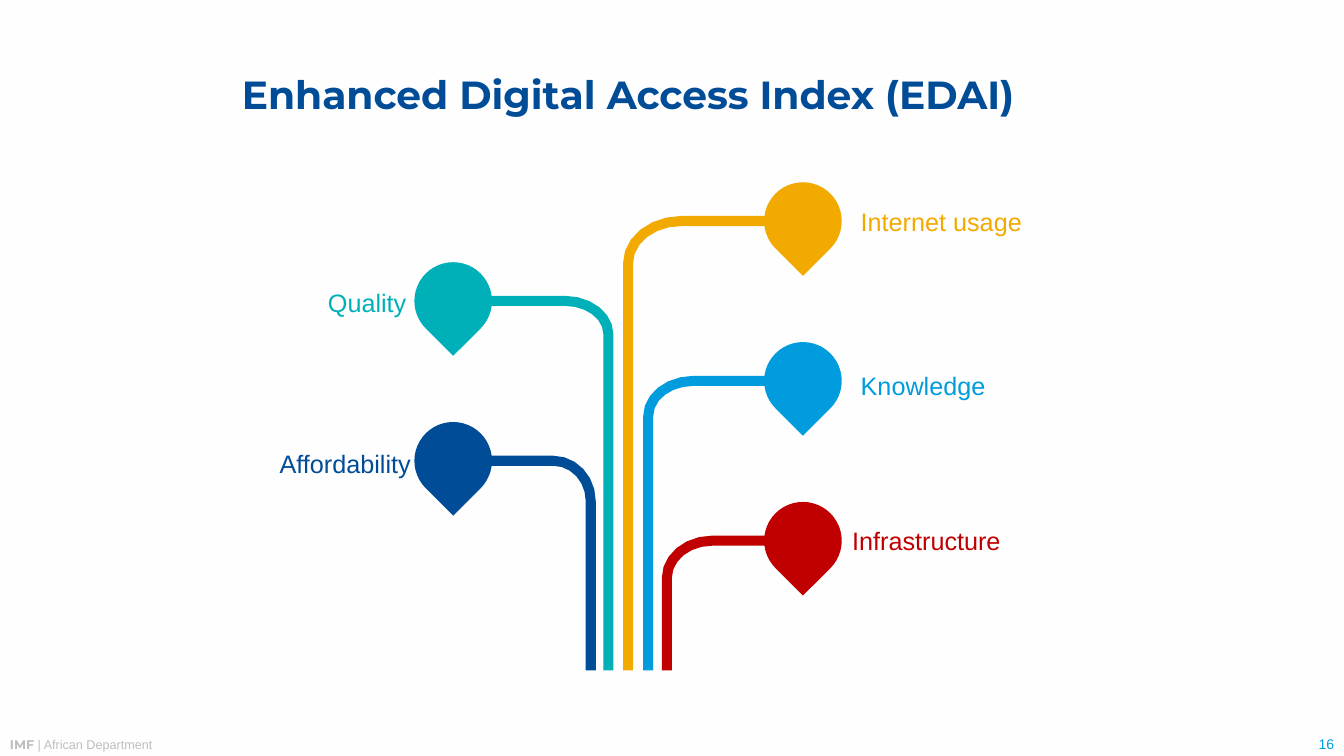
import math
from collections import namedtuple
from dataclasses import dataclass

import pptx
import pptx.dml.color
import pptx.enum.shapes
import pptx.enum.text
import pptx.util

Box = namedtuple("Box", "x y w h")
Branch = namedtuple("Branch", "label color lane side bend label_at label_width")
ALIGN = pptx.enum.text.PP_ALIGN
ANCHOR = pptx.enum.text.MSO_ANCHOR
FIT = pptx.enum.text.MSO_AUTO_SIZE


@dataclass(frozen=True)
class Theme:
    background: str = "FEFEFE"
    navy: str = "004C97"
    teal: str = "00B0B9"
    gold: str = "F2A900"
    blue: str = "009CDE"
    red: str = "C00000"
    grey: str = "BEBEBE"
    body: str = "Arial"
    heading: str = "Montserrat"
    title_size: int = 28
    label_size: int = 18
    number_size: int = 10
    footer_size: int = 9


T = Theme()

# Top to bottom, in grid units: lanes from the trunk's centre, labels from the pin's centre.
BRANCHES = [
    Branch("Internet usage", T.gold, 0, 1, (5.3, 4.2), (4.75, -2), 18.1),
    Branch("Quality", T.teal, -1.95, -1, (4.3, 3.3), (-13.4, -1.8), 9.9),
    Branch("Knowledge", T.blue, 2, 1, (4.5, 3.5), (4.75, -1.5), 14.5),
    Branch("Affordability", T.navy, -3.7, -1, (3.7, 4), (-18.2, -1.7), 15.2),
    Branch("Infrastructure", T.red, 3.85, 1, (4.5, 3.7), (3.9, -2), 16.9),
]


def rgb(color):
    return pptx.dml.color.RGBColor.from_string(color)


def area(prs, x, y, w, h):
    """Box from percentages of the slide's width and height."""
    sw, sh = prs.slide_width / 100, prs.slide_height / 100
    return Box(x * sw, y * sh, w * sw, h * sh)


def paint(sp, color):
    sp.shadow.inherit = False
    sp.fill.solid()
    sp.fill.fore_color.rgb = rgb(color)
    sp.line.fill.background()


def add_text(s, box, *runs, size, color, font=T.body, bold=False, align=ALIGN.LEFT,
             anchor=ANCHOR.TOP, wrap=True, fit=FIT.SHAPE_TO_FIT_TEXT, inset=None,
             spacing=None):
    """Each run is a string, or a tuple of string, font and bold."""
    tf = s.shapes.add_textbox(*map(round, box)).text_frame
    tf.word_wrap, tf.auto_size, tf.vertical_anchor = wrap, fit, anchor
    if inset is not None:
        tf.margin_left = tf.margin_right = tf.margin_top = tf.margin_bottom = inset
    p = tf.paragraphs[0]
    p.alignment, p.line_spacing = align, spacing
    for run in runs:
        words, face, heavy = (run, font, bold) if isinstance(run, str) else run
        r = p.add_run()
        r.text = words
        r.font.name, r.font.bold, r.font.size = face, heavy, pptx.util.Pt(size)
        r.font.color.rgb = rgb(color)


def add_stem(s, box, u, branch, pin_x, y):
    """Bar rising from the foot of the box, curving to a knob behind the pin."""
    side, half, knob = branch.side, u / 2, 3.05 * u
    x = box.x + box.w / 2 + branch.lane * u
    foot = box.y + box.h
    bend_w, bend_h = (b * u for b in branch.bend)

    def edge(offset):
        curve = [(x + side * (bend_w - (bend_w + offset) * math.cos(a)),
                  y + bend_h - (bend_h + offset) * math.sin(a))
                 for a in map(math.radians, range(0, 91, 15))]
        return [(x - side * offset, foot), *curve, (pin_x - side * knob, y - offset)]

    end = [(pin_x + side * knob * math.cos(a), y - knob * math.sin(a))
           for a in map(math.radians, range(135, -136, -45))]
    points = [(round(px), round(py)) for px, py in edge(half) + end + edge(-half)[::-1]]
    builder = s.shapes.build_freeform(*points[0])
    builder.add_line_segments(points[1:])
    paint(builder.convert_to_shape(), branch.color)


def add_pin(s, u, branch, x, y):
    size = 7.7 * u
    pin = s.shapes.add_shape(pptx.enum.shapes.MSO_SHAPE.TEAR, round(x - size / 2),
                             round(y - size / 2), round(size), round(size))
    pin.rotation = 135
    paint(pin, branch.color)


def add_label(s, u, branch, x, y):
    dx, dy = branch.label_at
    add_text(s, Box(x + dx * u, y + dy * u, branch.label_width * u, 4 * u),
             branch.label, size=T.label_size, color=branch.color, wrap=False)


def add_tree(s, box):
    """Stems at the back, then pins, then labels, on a grid 72 units wide."""
    u = box.w / 72
    places = [(branch, box.x + box.w / 2 + branch.side * 17.35 * u,
               box.y + (3.93 + 7.93 * row) * u) for row, branch in enumerate(BRANCHES)]
    for branch, x, y in places:
        add_stem(s, box, u, branch, x, y)
    for add_part in (add_pin, add_label):
        for branch, x, y in places:
            add_part(s, u, branch, x, y)


def add_title(s, box):
    add_text(s, box, "Enhanced Digital Access Index (EDAI)", size=T.title_size,
             color=T.navy, font=T.heading, bold=True, anchor=ANCHOR.MIDDLE,
             fit=FIT.NONE, inset=0, spacing=0.9)


def add_footer(s, source_box, number_box):
    add_text(s, source_box, ("IMF ", T.heading, True), "| African Department",
             size=T.footer_size, color=T.grey)
    add_text(s, number_box, "16", size=T.number_size, color=T.blue,
             align=ALIGN.RIGHT, anchor=ANCHOR.BOTTOM)


def main():
    prs = pptx.Presentation()
    prs.slide_width, prs.slide_height = pptx.util.Inches(13.33), pptx.util.Inches(7.5)
    s = prs.slides.add_slide(prs.slide_layouts[6])
    s.background.fill.solid()
    s.background.fill.fore_color.rgb = rgb(T.background)
    add_footer(s, area(prs, 0, 96.8, 75, 3.33), area(prs, 90.1, 96.53, 9.9, 3.6))
    add_tree(s, area(prs, 19.73, 24, 54, 64.67))
    add_title(s, area(prs, 18, 5.67, 62.5, 14.27))
    prs.save("out.pptx")


if __name__ == "__main__":
    main()
